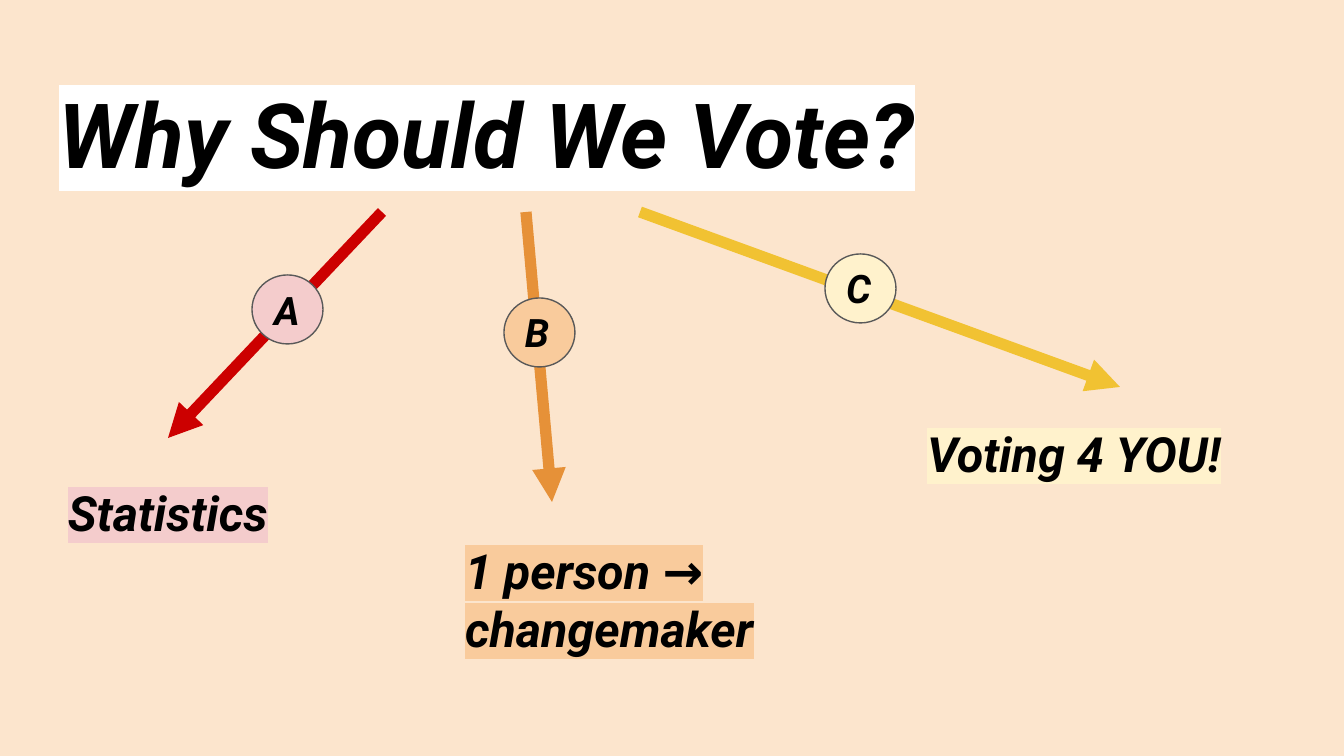
from dataclasses import dataclass

from lxml import etree
from pptx import Presentation
from pptx.dml.color import RGBColor
from pptx.enum.shapes import MSO_CONNECTOR, MSO_SHAPE
from pptx.enum.text import MSO_ANCHOR, MSO_AUTO_SIZE
from pptx.oxml.ns import qn
from pptx.util import Emu, Pt

STRAIGHT = MSO_CONNECTOR.STRAIGHT
OVAL = MSO_SHAPE.OVAL
TOP = MSO_ANCHOR.TOP
GROW = MSO_AUTO_SIZE.SHAPE_TO_FIT_TEXT
NO_AUTO_SIZE = MSO_AUTO_SIZE.NONE

SLIDE_WIDTH, SLIDE_HEIGHT = 1344, 756
EMU_PER_PX = 9144000 / SLIDE_WIDTH
INSET = 13
BADGE_WIDTH, BADGE_HEIGHT = 71, 69


@dataclass(frozen=True)
class Theme:
    font: str = "Roboto"
    background: str = "FCE5CD"
    text: str = "000000"
    title_highlight: str = "FFFFFF"
    outline: str = "595959"
    title_size: float = 48.2
    reason_size: float = 26
    letter_size: float = 21
    arrow_width: float = 6
    outline_width: float = 0.75


@dataclass(frozen=True)
class Reason:
    letter: str
    text: str
    tint: str
    arrow_color: str
    arrow_start: tuple
    arrow_end: tuple
    badge: tuple
    letter_box: tuple
    text_box: tuple


THEME = Theme()
REASONS = (
    Reason("A", "Statistics", "F4CCCC", "CC0000", (382, 212), (168, 438),
           (252, 275), (261, 273, 55, 75), (55, 470, 411, 86)),
    Reason("B", "1 person → changemaker", "F9CB9C", "E69138", (526, 212), (552, 502),
           (504, 298), (512, 295, 47, 75), (452, 528, 411, 145)),
    Reason("C", "Voting 4 YOU!", "FFF2CC", "F1C232", (640, 212), (1120, 387),
           (825, 254), (833, 251, 55, 75), (914, 411, 411, 86)),
)


def px(length):
    return Emu(round(length * EMU_PER_PX))


def rgb(color):
    return RGBColor.from_string(color)


def highlight_run(run, color):
    """Put the highlight right after the text fill, where the schema wants it."""
    highlight = etree.Element(qn("a:highlight"))
    etree.SubElement(highlight, qn("a:srgbClr"), val=color)
    run.font._element.find(qn("a:solidFill")).addnext(highlight)


def add_text(slide, text, box, size, highlight=None, auto_size=GROW):
    shape = slide.shapes.add_textbox(*map(px, box))
    frame = shape.text_frame
    frame.text = text
    frame.word_wrap = True
    frame.auto_size = auto_size
    frame.vertical_anchor = TOP
    frame.margin_left = frame.margin_right = px(INSET)
    frame.margin_top = frame.margin_bottom = px(INSET)
    run = frame.paragraphs[0].runs[0]
    run.font.name = THEME.font
    run.font.size = Pt(size)
    run.font.bold = run.font.italic = True
    run.font.color.rgb = rgb(THEME.text)
    if highlight:
        highlight_run(run, highlight)


def add_arrow(slide, start, end, color):
    arrow = slide.shapes.add_connector(STRAIGHT, *map(px, start + end))
    arrow.line.color.rgb = rgb(color)
    arrow.line.width = Pt(THEME.arrow_width)
    line = arrow.line._get_or_add_ln()
    etree.SubElement(line, qn("a:tailEnd"), type="triangle")
    etree.SubElement(arrow._element.spPr, qn("a:effectLst"))


def add_badge(slide, position, fill):
    badge = slide.shapes.add_shape(
        OVAL, *map(px, position + (BADGE_WIDTH, BADGE_HEIGHT)))
    badge.shadow.inherit = False
    badge.fill.solid()
    badge.fill.fore_color.rgb = rgb(fill)
    badge.line.color.rgb = rgb(THEME.outline)
    badge.line.width = Pt(THEME.outline_width)


def main():
    presentation = Presentation()
    presentation.slide_width = px(SLIDE_WIDTH)
    presentation.slide_height = px(SLIDE_HEIGHT)
    slide = presentation.slides.add_slide(presentation.slide_layouts[6])
    slide.background.fill.solid()
    slide.background.fill.fore_color.rgb = rgb(THEME.background)

    add_text(slide, "Why Should We Vote?", (46, 66, 1252, 85), THEME.title_size,
             THEME.title_highlight, NO_AUTO_SIZE)
    for reason in REASONS:
        add_arrow(slide, reason.arrow_start, reason.arrow_end, reason.arrow_color)
    for reason in REASONS:
        add_text(slide, reason.text, reason.text_box, THEME.reason_size, reason.tint)
    for reason in REASONS:
        add_badge(slide, reason.badge, reason.tint)
        add_text(slide, reason.letter, reason.letter_box, THEME.letter_size)

    presentation.save("out.pptx")


if __name__ == "__main__":
    main()
